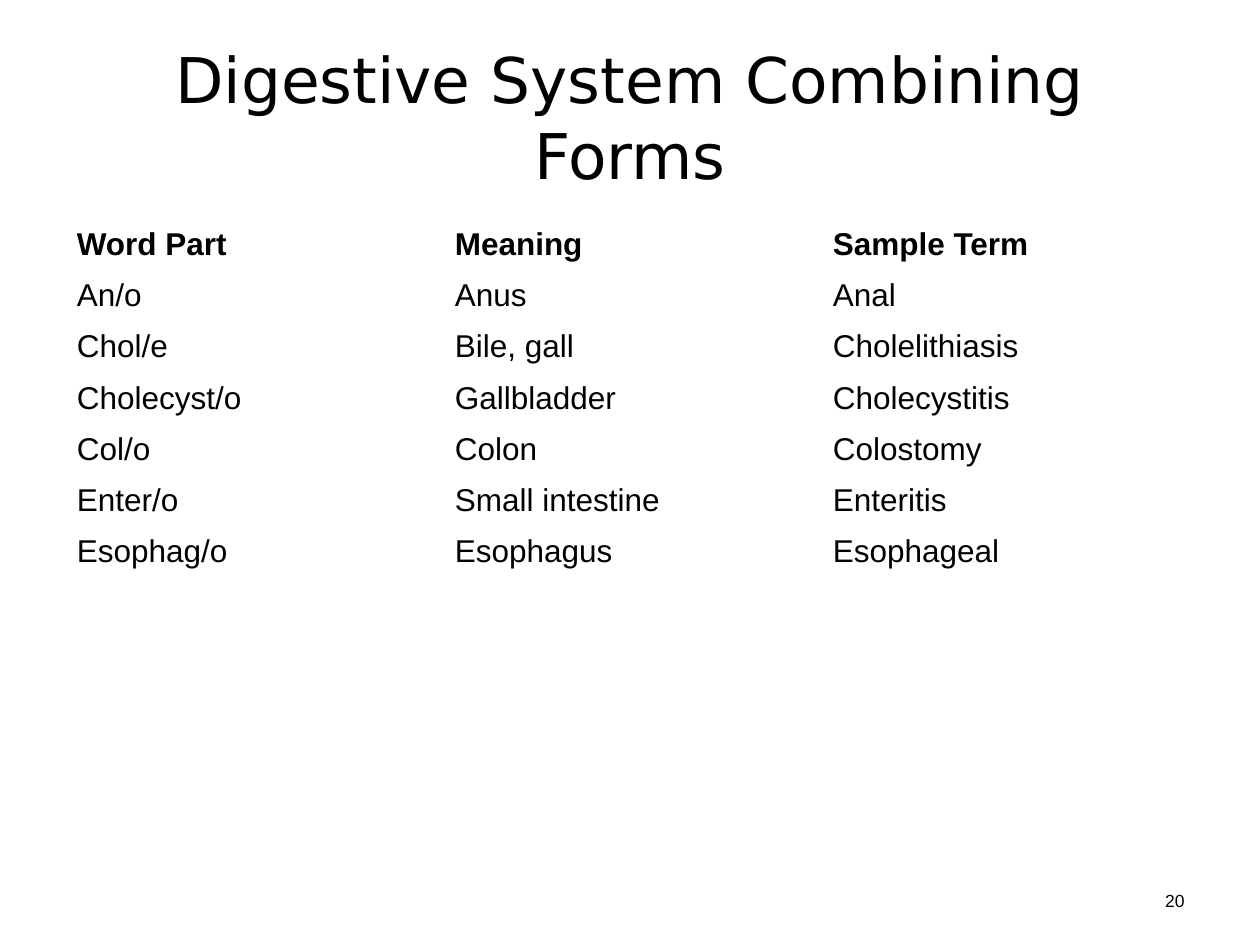
from pptx import Presentation
from pptx.dml.color import RGBColor
from pptx.enum.text import MSO_ANCHOR as Anchor, MSO_AUTO_SIZE as AutoSize, PP_ALIGN as Align
from pptx.util import Cm, Pt

COLORS = {"text": "000000", "background": "FFFFFF"}
TITLE_FONT, BODY_FONT = "DejaVu Sans", "Arial"

TERMS = [
    ("Word Part", "Meaning", "Sample Term"),
    ("An/o", "Anus", "Anal"),
    ("Chol/e", "Bile, gall", "Cholelithiasis"),
    ("Cholecyst/o", "Gallbladder", "Cholecystitis"),
    ("Col/o", "Colon", "Colostomy"),
    ("Enter/o", "Small intestine", "Enteritis"),
    ("Esophag/o", "Esophagus", "Esophageal"),
]


def format_paragraph(paragraph, font_name, size, align=Align.LEFT, bold=False):
    paragraph.alignment = align
    font = paragraph.font
    font.name, font.size, font.bold = font_name, Pt(size), bold
    font.color.rgb = RGBColor.from_string(COLORS["text"])


def place_title(slide, text, left, top, width, height):
    title = slide.shapes.title
    title.left, title.top, title.width, title.height = left, top, width, height
    frame = title.text_frame
    frame.text = text
    frame.word_wrap = True
    frame.auto_size = AutoSize.NONE
    frame.vertical_anchor = Anchor.MIDDLE
    format_paragraph(frame.paragraphs[0], TITLE_FONT, 36, Align.CENTER)


def add_terms_table(slide, terms, left, top, width, height):
    shape = slide.shapes.add_table(len(terms), len(terms[0]), left, top, width, height)
    table = shape.table
    table.first_row = table.horz_banding = False
    for row, values in enumerate(terms):
        for column, value in enumerate(values):
            cell = table.cell(row, column)
            cell.fill.solid()
            cell.fill.fore_color.rgb = RGBColor.from_string(COLORS["background"])
            cell.margin_left = cell.margin_right = Cm(0.28)
            cell.margin_top = cell.margin_bottom = Cm(0.13)
            cell.text = value
            format_paragraph(cell.text_frame.paragraphs[0], BODY_FONT, 18, bold=row == 0)


def add_slide_number(slide, number, left, top, width, height):
    frame = slide.shapes.add_textbox(left, top, width, height).text_frame
    frame.word_wrap = True
    frame.vertical_anchor = Anchor.MIDDLE
    frame.text = number
    format_paragraph(frame.paragraphs[0], BODY_FONT, 10, Align.RIGHT)


def main():
    presentation = Presentation()
    presentation.slide_width, presentation.slide_height = Cm(25.4), Cm(19.05)
    slide = presentation.slides.add_slide(presentation.slide_layouts.get_by_name("Title Only"))

    margin = Cm(1.27)
    content_width = presentation.slide_width - 2 * margin
    number_width = Cm(1.42)
    place_title(slide, "Digestive System Combining Forms",
                margin, Cm(0.76), content_width, Cm(3.18))
    add_terms_table(slide, TERMS, margin, Cm(4.45), content_width, Cm(7.21))
    add_slide_number(slide, "20", margin + content_width - number_width, Cm(17.4),
                     number_width, Cm(1.52))
    presentation.save("out.pptx")


if __name__ == "__main__":
    main()
